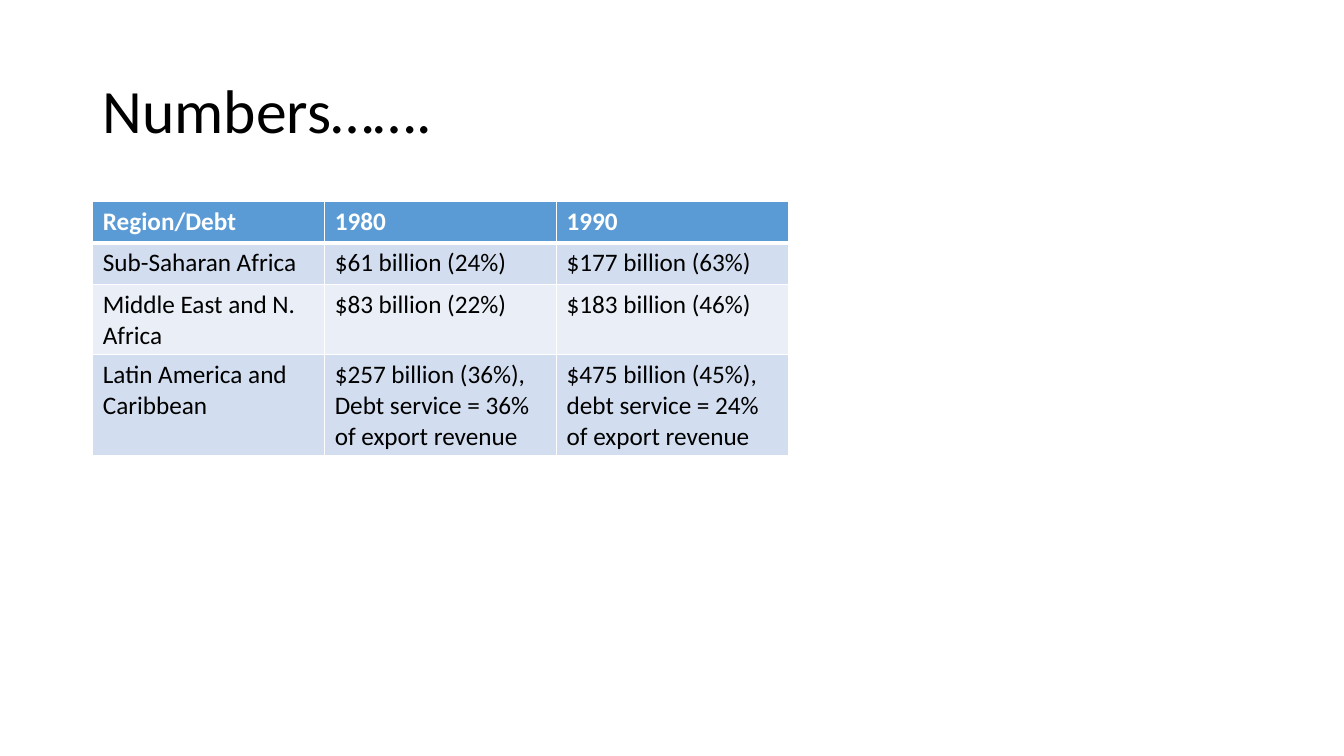
from dataclasses import dataclass

from lxml import etree
from pptx import Presentation
from pptx import util as u
from pptx.dml.color import RGBColor
from pptx.enum import text
from pptx.oxml import ns


@dataclass(frozen=True)
class Theme:
    font: str = "Calibri"
    ink: str = "000000"
    white: str = "FFFFFF"
    head: str = "5B9BD5"
    bands: tuple = ("D2DEEF", "EAEFF7")
    title: int = 44
    body: int = 18
    thin: int = 1
    thick: int = 3


DEBTS = [
    ("Region/Debt", "1980", "1990"),
    ("Sub-Saharan Africa", "$61 billion (24%)", "$177 billion (63%)"),
    ("Middle East and N. Africa", "$83 billion (22%)", "$183 billion (46%)"),
    ("Latin America and Caribbean",
     "$257 billion (36%), Debt service = 36% of export revenue",
     "$475 billion (45%), debt service = 24% of export revenue"),
]


def write(frame, words, font, size, color, bold=False, space=1.0):
    par = frame.paragraphs[0]
    par.line_spacing = space
    run = par.add_run()
    run.text = words
    run.font.name = font
    run.font.size = u.Pt(size)
    run.font.bold = bold
    run.font.color.rgb = RGBColor.from_string(color)


def edge(cell, side, color, width):
    """Draw one border of a cell; side is L, R, T or B."""
    line = etree.SubElement(cell._tc.get_or_add_tcPr(), ns.qn("a:ln" + side),
                            w=str(u.Pt(width)))
    fill = etree.SubElement(line, ns.qn("a:solidFill"))
    etree.SubElement(fill, ns.qn("a:srgbClr"), val=color)


class Board:
    """A slide on a grid of five columns inside the left and right margins."""
    left, col, row = u.Inches(0.92), u.Inches(2.3), u.Inches(0.41)

    def __init__(self, deck, theme):
        self.theme = theme
        self.slide = deck.slides.add_slide(deck.slide_layouts[6])

    def title(self, words, top, high, cols):
        look = self.theme
        box = self.slide.shapes.add_textbox(
            self.left, u.Inches(top), cols * self.col, u.Inches(high))
        frame = box.text_frame
        frame.word_wrap = True
        frame.vertical_anchor = text.MSO_ANCHOR.MIDDLE
        write(frame, words, look.font, look.title, look.ink, space=0.9)

    def table(self, data, top, high):
        cols = len(data[0])
        frame = self.slide.shapes.add_table(
            len(data), cols, self.left, u.Inches(top),
            cols * self.col, u.Inches(high))
        grid = frame.table
        for row, words in enumerate(data):
            grid.rows[row].height = self.row
            for col, word in enumerate(words):
                self.cell(grid.cell(row, col), word, row)
        frame.height = u.Inches(high)

    def cell(self, cell, words, row):
        look = self.theme
        head = row == 0
        for side in "LRTB":
            heavy = (head and side == "B") or (row == 1 and side == "T")
            edge(cell, side, look.white, look.thick if heavy else look.thin)
        cell.fill.solid()
        cell.fill.fore_color.rgb = RGBColor.from_string(
            look.head if head else look.bands[(row - 1) % 2])
        write(cell.text_frame, words, look.font, look.body,
              look.white if head else look.ink, bold=head)


def main():
    deck = Presentation()
    deck.slide_width, deck.slide_height = u.Inches(13.33), u.Inches(7.5)
    board = Board(deck, Theme())
    board.title("Numbers…….", top=0.4, high=1.45, cols=5)
    board.table(DEBTS, top=2, high=2.51)
    deck.save("out.pptx")


if __name__ == "__main__":
    main()
